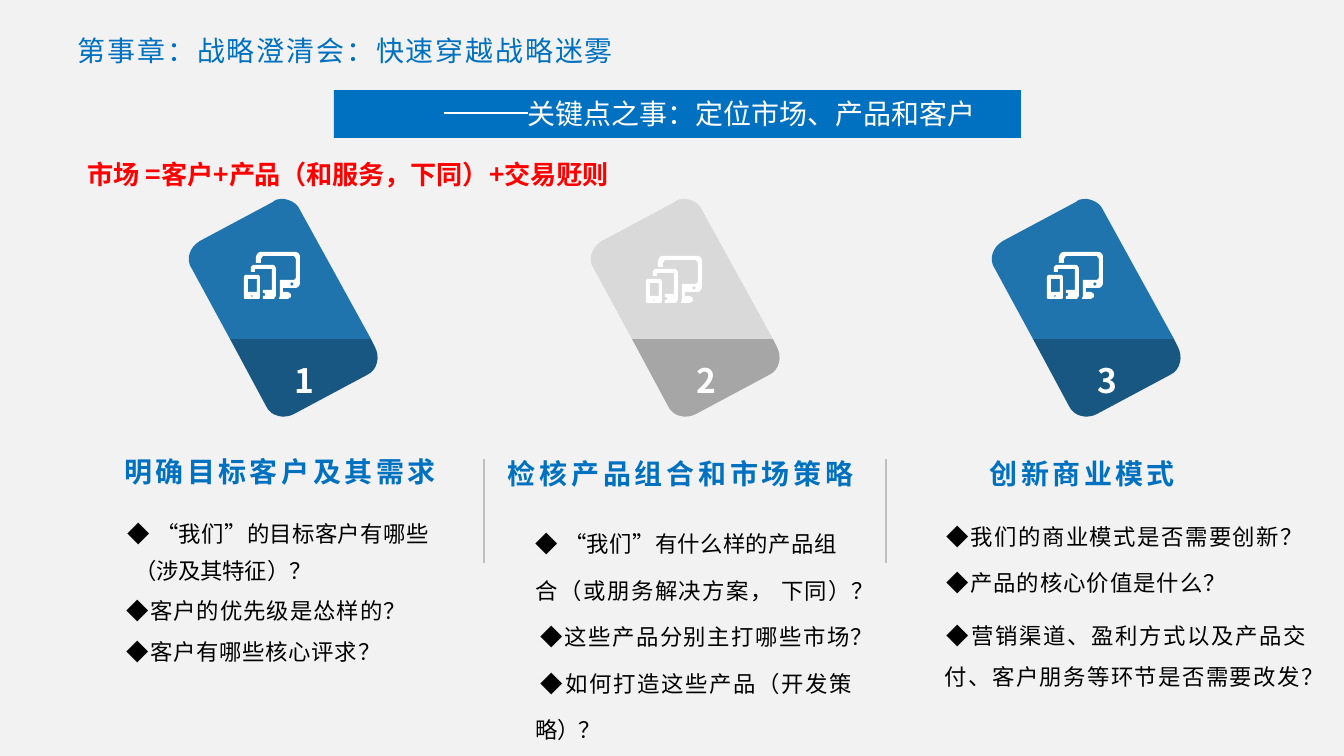
from collections import namedtuple

from lxml.etree import SubElement
from pptx import Presentation
from pptx.dml.color import RGBColor
from pptx.enum.shapes import MSO_CONNECTOR, MSO_SHAPE
from pptx.oxml.ns import qn
from pptx.util import Emu, Pt

PX = 914400 / 134.4
FINE = 10  # outline units per px
CJK = "Noto Sans CJK SC"
NO_GRID_STYLE = "{2D5ABB26-0587-4C30-8999-92F81FD0307C}"

BLUE = RGBColor(0x00, 0x70, 0xC0)
CARD_BLUE = RGBColor(0x1F, 0x74, 0xAD)
CARD_NAVY = RGBColor(0x17, 0x57, 0x82)
LIGHT_GREY = RGBColor(0xD9, 0xD9, 0xD9)
MID_GREY = RGBColor(0xA6, 0xA6, 0xA6)
RULE_GREY = RGBColor(0xBF, 0xBF, 0xBF)
PAPER = RGBColor(0xF2, 0xF2, 0xF2)
WHITE = RGBColor(0xFF, 0xFF, 0xFF)
BLACK = RGBColor(0x00, 0x00, 0x00)
RED = RGBColor(0xFF, 0x00, 0x00)

# A line of text: pitch and indent in px, size in points, spans of (text, spacing)
Line = namedtuple("Line", "pitch indent size color bold spans")

# Outlines in px: pairs are corners, sixes are Bezier curves
CARD_TOP = [(284, 199), (290, 200, 297, 203, 300, 210), (371, 339), (230, 339),
            (192, 269), (185, 259, 190, 247, 200, 241), (273, 202),
            (276, 199, 280, 199, 284, 199)]
CARD_FOOT = [(230, 339), (371, 339), (375, 347), (380, 356, 378, 370, 367, 375),
             (294, 414), (285, 419, 271, 417, 266, 406)]
DEVICES = [
    # phone, its screen and its button
    [(1, 23), (15, 23), (16, 25), (16, 46), (15, 47), (1, 47), (0, 46), (0, 25)],
    [(4, 27), (13, 27), (13, 40), (4, 40)],
    [(7, 44), (8, 43), (9, 44), (8, 45)],
    # tablet
    [(7, 20), (7, 15), (9, 13), (30, 13), (32, 16), (32, 44), (30, 47), (19, 47),
     (19, 44), (21, 44), (21, 41), (19, 41), (19, 38), (28, 38), (28, 17),
     (11, 17), (11, 20)],
    # monitor and its button
    [(12, 11), (12, 5), (13, 2, 14, 0, 17, 0), (51, 0), (54, 0, 56, 2, 56, 5),
     (56, 31), (56, 34, 54, 36, 51, 36), (39, 36), (39, 40), (44, 40), (47, 42),
     (47, 45), (44, 47), (35, 47), (36, 44), (36, 28), (50, 28), (52, 26), (52, 7),
     (50, 4), (19, 4), (17, 7), (17, 11)],
    [(46, 32), (48, 30), (50, 32), (48, 34)],
]


def px(length):
    return Emu(round(length * PX))


def heading(pitch, indent, text, spacing):
    return Line(pitch, indent, 15, BLUE, True, [(text, spacing)])


def body(pitch, indent, *spans):
    return Line(pitch, indent, 12, BLACK, False, spans)


def bullet(pitch, indent, text, spacing):
    return body(pitch, indent, ("◆", spacing), (text, spacing))


def write_lines(frame, lines):
    frame.word_wrap = True
    frame.margin_left = frame.margin_right = frame.margin_top = frame.margin_bottom = 0
    for index, line in enumerate(lines):
        para = frame.add_paragraph() if index else frame.paragraphs[0]
        para.line_spacing = px(line.pitch)
        para._p.get_or_add_pPr().set("marL", str(px(line.indent)))
        for text, spacing in line.spans:
            span = para.add_run()
            span.text = text
            span.font.size = Pt(line.size)
            span.font.bold = line.bold
            span.font.color.rgb = line.color
            span.font.name = "Arial" if text == "◆" else CJK
            properties = span._r.get_or_add_rPr()
            properties.set("spc", str(round(spacing * 100)))
            SubElement(properties, qn("a:ea")).set("typeface", CJK)


def add_text(shapes, left, top, width, height, lines):
    box = shapes.add_textbox(px(left), px(top), px(width), px(height))
    write_lines(box.text_frame, lines)


def paint(shape, color):
    shape.shadow.inherit = False
    shape.fill.solid()
    shape.fill.fore_color.rgb = color
    shape.line.fill.background()


def add_rectangle(page, left, top, width, height, color):
    paint(page.shapes.add_shape(MSO_SHAPE.RECTANGLE, px(left), px(top),
                                px(width), px(height)), color)


def add_rule(page, x1, y1, x2, y2, color):
    rule = page.shapes.add_connector(MSO_CONNECTOR.STRAIGHT, px(x1), px(y1), px(x2), px(y2))
    rule.line.color.rgb = color
    rule.line.width = Pt(1)
    SubElement(rule._element.spPr, qn("a:effectLst"))


def flatten(outline, steps=8):
    points = []
    for segment in outline:
        if len(segment) == 2:
            points.append(segment)
            continue
        x0, y0 = points[-1]
        x1, y1, x2, y2, x3, y3 = segment
        for step in range(1, steps + 1):
            t = step / steps
            a, b, c, d = (1 - t) ** 3, 3 * t * (1 - t) ** 2, 3 * t * t * (1 - t), t ** 3
            points.append((a * x0 + b * x1 + c * x2 + d * x3,
                           a * y0 + b * y1 + c * y2 + d * y3))
    return [(x * FINE, y * FINE) for x, y in points]


def add_outline(shapes, outlines, left, top, color):
    first, *others = [flatten(outline) for outline in outlines]
    builder = shapes.build_freeform(*first[0], scale=PX / FINE)
    builder.add_line_segments(first[1:], close=True)
    for points in others:
        builder.move_to(*points[0])
        builder.add_line_segments(points[1:], close=True)
    paint(builder.convert_to_shape(px(left), px(top)), color)


def add_card(page, number, offset, icon_top, top_color, foot_color):
    shapes = page.shapes.add_group_shape().shapes
    add_outline(shapes, [CARD_FOOT], offset, 0, foot_color)
    add_outline(shapes, [CARD_TOP], offset, 0, top_color)
    add_outline(shapes, DEVICES, 244 + offset, icon_top, WHITE)
    add_text(shapes, 185 + offset, 196, 196, 231,
             [Line(204, 110, 18, WHITE, True, [(number, -0.2)])])


def add_columns(page, left, top, widths, height, columns):
    frame = page.shapes.add_table(1, len(widths), px(left), px(top), px(sum(widths)), px(height))
    table = frame.table
    table.first_row = table.horz_banding = False
    table._tbl.tblPr.find(qn("a:tableStyleId")).text = NO_GRID_STYLE
    table.rows[0].height = px(height)
    for index, width in enumerate(widths):
        table.columns[index].width = px(width)
        cell = table.cell(0, index)
        cell.fill.background()
        cell.margin_left = cell.margin_right = cell.margin_top = cell.margin_bottom = 0
        if index in columns:
            write_lines(cell.text_frame, columns[index])


def main():
    deck = Presentation()
    deck.slide_width, deck.slide_height = px(1344), px(756)
    page = deck.slides.add_slide(deck.slide_layouts[6])
    add_rectangle(page, 0, 0, 1344, 756, PAPER)

    # Second and third columns
    products = [
        heading(40, 11, "检核产品组合和市场策略", 2),
        body(66, 39, ("◆", 0.2), (" “我们”有什么样的产品组", 0.2)),
        body(47, 39, ("合（或朋务解决方案，", 0.8), (" 下同", 0.7), ("） ？", -1.2)),
        bullet(46, 44, "这些产品分别主打哪些市场？", 0.8),
        bullet(47, 44, "如何打造这些产品（开发策", 0.9),
        body(46, 39, ("略）？", -0.5)),
    ]
    business = [
        heading(40, 74, "创新商业模式", 1.8),
        bullet(59, 31, "我们的商业模式是否需要创新？", 0.8),
        bullet(46, 31, "产品的核心价值是什么？", 0.5),
        bullet(53, 31, "营销渠道、盈利方式以及产品交", 0.9),
        body(41, 29, ("付、客户朋务等环节是否需要改发？", 0.75)),
    ]
    add_columns(page, 484, 453, [13, 380, 39, 413], 247, {1: products, 3: business})

    # Title, banner and formula
    add_rectangle(page, 334, 90, 687, 48, BLUE)
    add_rule(page, 444, 113, 528, 113, WHITE)
    add_text(page.shapes, 46, 28, 1144, 161, [
        Line(39, 32, 15, BLUE, False, [("第事章：战略澄清会：快速穿越战略迷雾", 1)]),
        Line(63, 482, 15, WHITE, False, [("关键点之事：定位市场、产品和客户", 0)]),
        Line(60, 42, 14, RED, True, [("市场 =客户+产品（和服务，下同）+交易觃则", -0.1)]),
    ])

    # First column
    add_text(page.shapes, 121, 452, 321, 214, [
        heading(36, 3, "明确目标客户及其需求", 1.9),
        body(59, 7, ("◆", 0.2), (" “我们”的目标客户有哪些", 0.2)),
        body(37, 13, ("（涉及其特征）？", -0.1)),
        bullet(40, 6, "客户的优先级是怂样的？", 0.5),
        bullet(41, 6, "客户有哪些核心评求？", 0.4),
    ])

    # Numbered cards and column rules
    add_card(page, "1", 0, 252, CARD_BLUE, CARD_NAVY)
    add_card(page, "2", 402, 256, LIGHT_GREY, MID_GREY)
    add_card(page, "3", 803, 252, CARD_BLUE, CARD_NAVY)
    for x in (484, 886):
        add_rule(page, x, 459, x, 563, RULE_GREY)

    deck.save("out.pptx")


if __name__ == "__main__":
    main()
